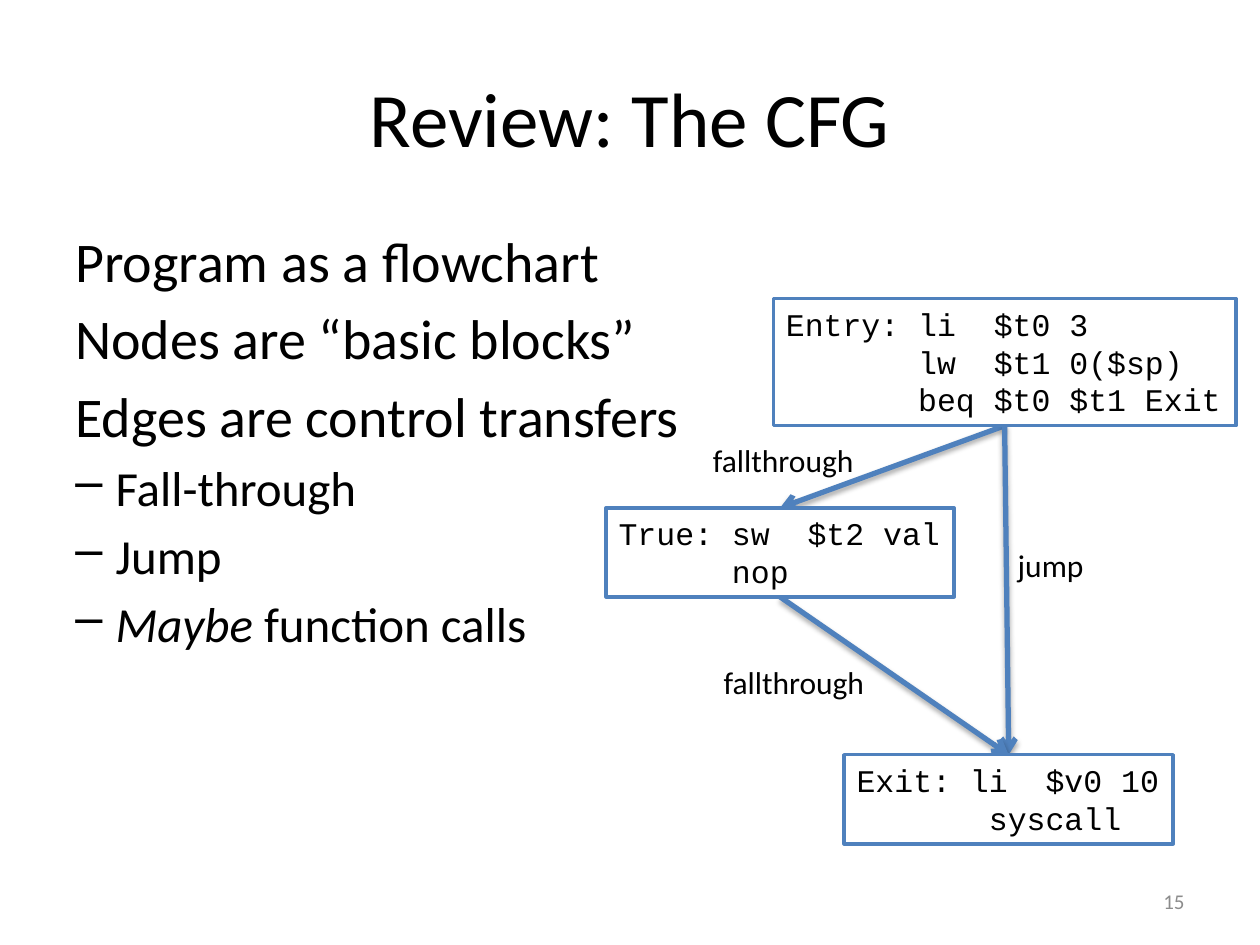
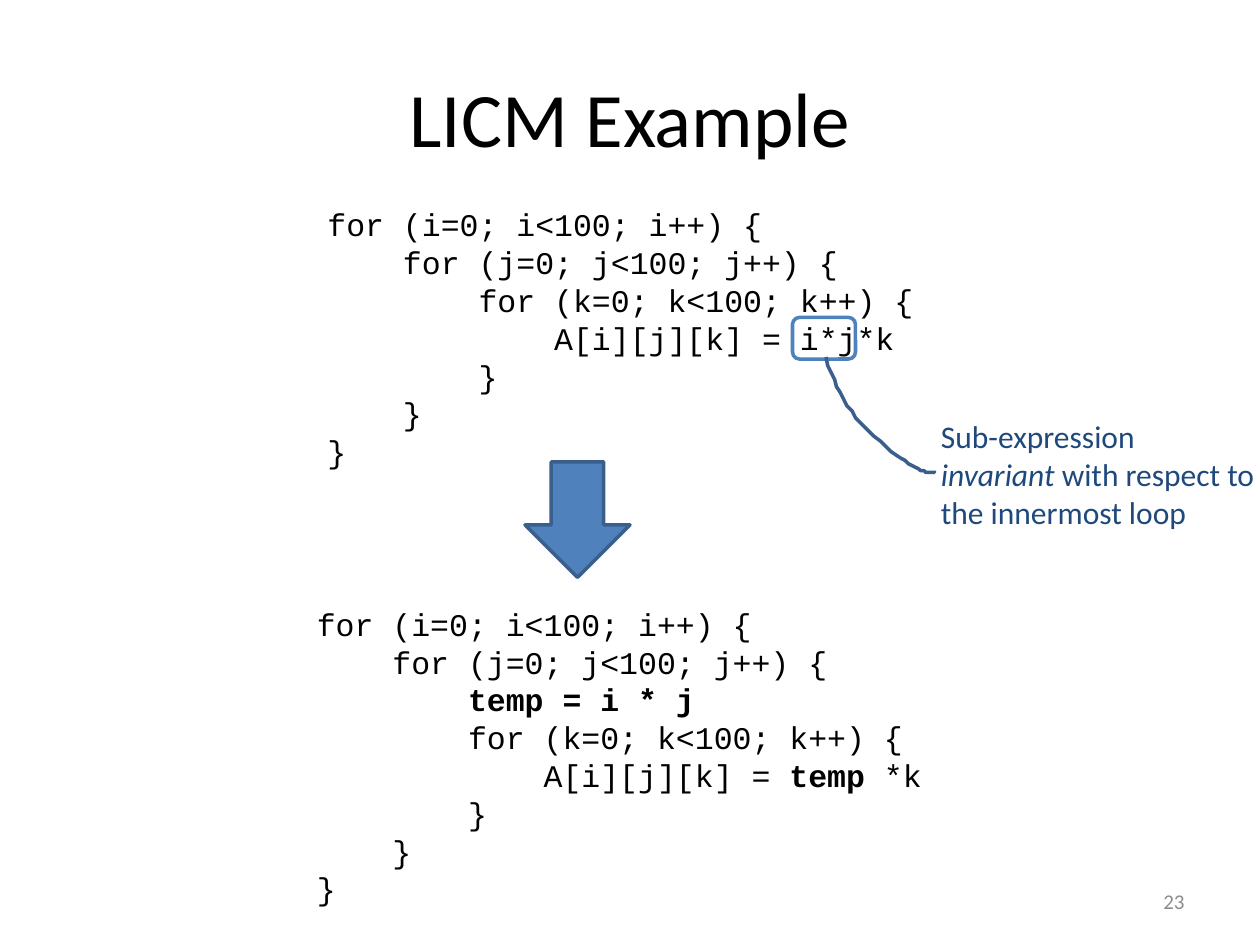
from lxml.etree import SubElement
from pptx import Presentation
from pptx.dml.color import RGBColor
from pptx.enum.shapes import MSO_CONNECTOR as LINE, MSO_SHAPE as SHAPE
from pptx.enum.text import MSO_ANCHOR as ANCHOR, MSO_AUTO_SIZE as FIT, PP_ALIGN as ALIGN
from pptx.oxml.ns import qn
from pptx.util import Pt

COLORS = {"text": "000000", "paper": "FFFFFF", "number": "8C8C8C",
          "blue": "4F81BD", "edge": "3A5F8C", "note": "1F497D"}
SANS, MONO = "Calibri", "Courier New"
TITLE_BOX = (36, 21.6, 648, 90)
NUMBER_BOX = (516, 500.4, 168, 28.8)
BOTTOM, TOP = 2, 0  # connection sites of a rectangle

# Slide 15: a line is a string or a list of (text, style), style "b", "i" or ""
POINTS = ["Program as a flowchart", "Nodes are “basic blocks”",
          "Edges are control transfers"]
TRANSFERS = ["Fall-through", "Jump", [("Maybe", "i"), (" function calls", "")]]
BLOCKS = {
    "entry": ((442, 170.6, 264.2, 72.7),
              ["Entry: li  $t0 3",
               "       lw  $t1 0($sp)",
               "       beq $t0 $t1 Exit"]),
    "true": ((346.4, 290.2, 198.8, 50.9),
             ["True: sw  $t2 val",
              "      nop"]),
    "exit": ((482.4, 431.3, 188, 50.9),
             ["Exit: li  $v0 10",
              "       syscall"]),
}
EDGES = [("entry", "true"), ("entry", "exit"), ("true", "exit")]
EDGE_LABELS = [("fallthrough", (400.3, 248.4, 95.8, 29)),
               ("fallthrough", (406.4, 375.3, 95.8, 29)),
               ("jump", (574.5, 308.2, 52.6, 29))]

# Slide 23
BEFORE = ["for (i=0; i<100; i++) {",
          "    for (j=0; j<100; j++) {",
          "        for (k=0; k<100; k++) {",
          "            A[i][j][k] = i*j*k",
          "        }",
          "    }",
          "}"]
AFTER = BEFORE[:2] + [
    [("        temp = i * j", "b")],
    BEFORE[2],
    [("            A[i][j][k] = ", ""), ("temp ", "b"), ("*k", "")],
] + BEFORE[4:]
NOTE = ["Sub-expression",
        [("invariant ", "i"), ("with respect to", "")],
        "the innermost loop"]
POINTER_START = (534.2, 269.3)
POINTER_CURVES = [  # two control points and an end point each
    ((532.8, 270), (531.4, 270.7), (527.8, 269.3)),
    ((524.2, 267.8), (519.1, 265), (511.9, 259.9)),
    ((505.4, 254.2), (493.2, 244.8), (486.7, 235.4)),
    ((480.2, 226.1), (475.9, 215.3), (471.6, 204.5)),
]


def rgb(name):
    return RGBColor.from_string(COLORS[name])


def pts(box):
    return [Pt(v) for v in box]


def write(sp, lines, size=18, font=SANS, color="text", align=ALIGN.LEFT,
          anchor=ANCHOR.TOP, wrap=False, before=0, first=True, bullet=None):
    """Put lines into a shape; first=False adds them after those already there."""
    tf = sp.text_frame
    tf.word_wrap, tf.vertical_anchor, tf.auto_size = wrap, anchor, FIT.NONE
    for n, line in enumerate(lines):
        p = tf.paragraphs[0] if first and n == 0 else tf.add_paragraph()
        p.alignment, p.space_before = align, Pt(before)
        if bullet:
            pPr = p._p.get_or_add_pPr()
            pPr.set("marL", str(Pt(23)))
            pPr.set("indent", str(-Pt(23)))
            SubElement(pPr, qn("a:buChar"), char=bullet)
        for text, style in [(line, "")] if isinstance(line, str) else line:
            r = p.add_run()
            r.text = text
            r.font.name, r.font.size = font, Pt(size)
            r.font.bold, r.font.italic = style == "b", style == "i"
            r.font.color.rgb = rgb(color)
    return sp


def add_text(s, box, lines, **fmt):
    return write(s.shapes.add_textbox(*pts(box)), lines, **fmt)


def outline(sp, color, width=2):
    sp.line.color.rgb, sp.line.width = rgb(color), Pt(width)


def add_shape(s, kind, box, fill=None, line="blue"):
    sp = s.shapes.add_shape(kind, *pts(box))
    sp.shadow.inherit = False
    if fill:
        sp.fill.solid()
        sp.fill.fore_color.rgb = rgb(fill)
    else:
        sp.fill.background()
    outline(sp, line)
    return sp


def add_edge(s, start, end):
    """Arrow with a soft shadow from the bottom of one block to the top of another."""
    cx = s.shapes.add_connector(LINE.STRAIGHT, 0, 0, 0, 0)
    cx.begin_connect(start, BOTTOM)
    cx.end_connect(end, TOP)
    outline(cx, "blue", 3)
    SubElement(cx.line._get_or_add_ln(), qn("a:tailEnd"), type="arrow")
    effects = SubElement(cx._element.spPr, qn("a:effectLst"))
    shadow = SubElement(effects, qn("a:outerShdw"), blurRad=str(Pt(3.1)),
                        dist=str(Pt(1.8)), dir="5400000", rotWithShape="0")
    black = SubElement(shadow, qn("a:srgbClr"), val=COLORS["text"])
    SubElement(black, qn("a:alpha"), val="35000")
    return cx


def curve_points(start, curves, steps=8):
    """Sample a chain of cubic Bezier curves."""
    points = []
    for a, b, end in curves:
        for n in range(1, steps + 1):
            t = n / steps
            u = 1 - t
            points.append(tuple(
                u**3 * p0 + 3 * u * u * t * p1 + 3 * u * t * t * p2 + t**3 * p3
                for p0, p1, p2, p3 in zip(start, a, b, end)))
        start = end
    return points


def add_slide(prs, title, number):
    s = prs.slides.add_slide(prs.slide_layouts[5])
    sp = s.shapes.title
    sp.left, sp.top, sp.width, sp.height = pts(TITLE_BOX)
    write(sp, [title], size=44, align=ALIGN.CENTER, anchor=ANCHOR.MIDDLE, wrap=True)
    add_text(s, NUMBER_BOX, [str(number)], size=12, color="number",
             align=ALIGN.RIGHT, anchor=ANCHOR.MIDDLE, wrap=True)
    return s


def build_cfg(prs):
    s = add_slide(prs, "Review: The CFG", 15)
    body = add_text(s, (36, 126, 648, 356.4), POINTS, size=32, before=5.7, wrap=True)
    write(body, TRANSFERS, size=28, before=5.2, wrap=True, first=False, bullet="–")
    blocks = {}
    for name, (box, code) in BLOCKS.items():
        sp = add_shape(s, SHAPE.RECTANGLE, box, fill="paper")
        blocks[name] = write(sp, code, font=MONO)
    for start, end in EDGES:
        cx = add_edge(s, blocks[start], blocks[end])
        blocks["entry"]._element.addprevious(cx._element)  # edges lie behind blocks
    for label, box in EDGE_LABELS:
        add_text(s, box, [label])


def build_licm(prs):
    s = add_slide(prs, "LICM Example", 23)
    add_text(s, (180, 113.8, 360, 159.8), BEFORE, font=MONO, wrap=True)
    add_shape(s, SHAPE.ROUNDED_RECTANGLE, (452.9, 181.4, 36, 23.8))
    path_builder = s.shapes.build_freeform(*POINTER_START, scale=Pt(1))
    path_builder.add_line_segments(curve_points(POINTER_START, POINTER_CURVES), close=False)
    pointer = path_builder.convert_to_shape()
    pointer.shadow.inherit = False
    pointer.fill.background()
    outline(pointer, "edge")
    add_text(s, (530.6, 234.7, 195.8, 72.7), NOTE, color="note")
    add_shape(s, SHAPE.DOWN_ARROW, (300, 264, 60, 66), fill="blue", line="edge")
    add_text(s, (174, 342, 360, 181.4), AFTER, font=MONO, wrap=True)


def main():
    prs = Presentation()
    prs.slide_width, prs.slide_height = Pt(720), Pt(540)
    build_cfg(prs)
    build_licm(prs)
    prs.save("out.pptx")


if __name__ == "__main__":
    main()
